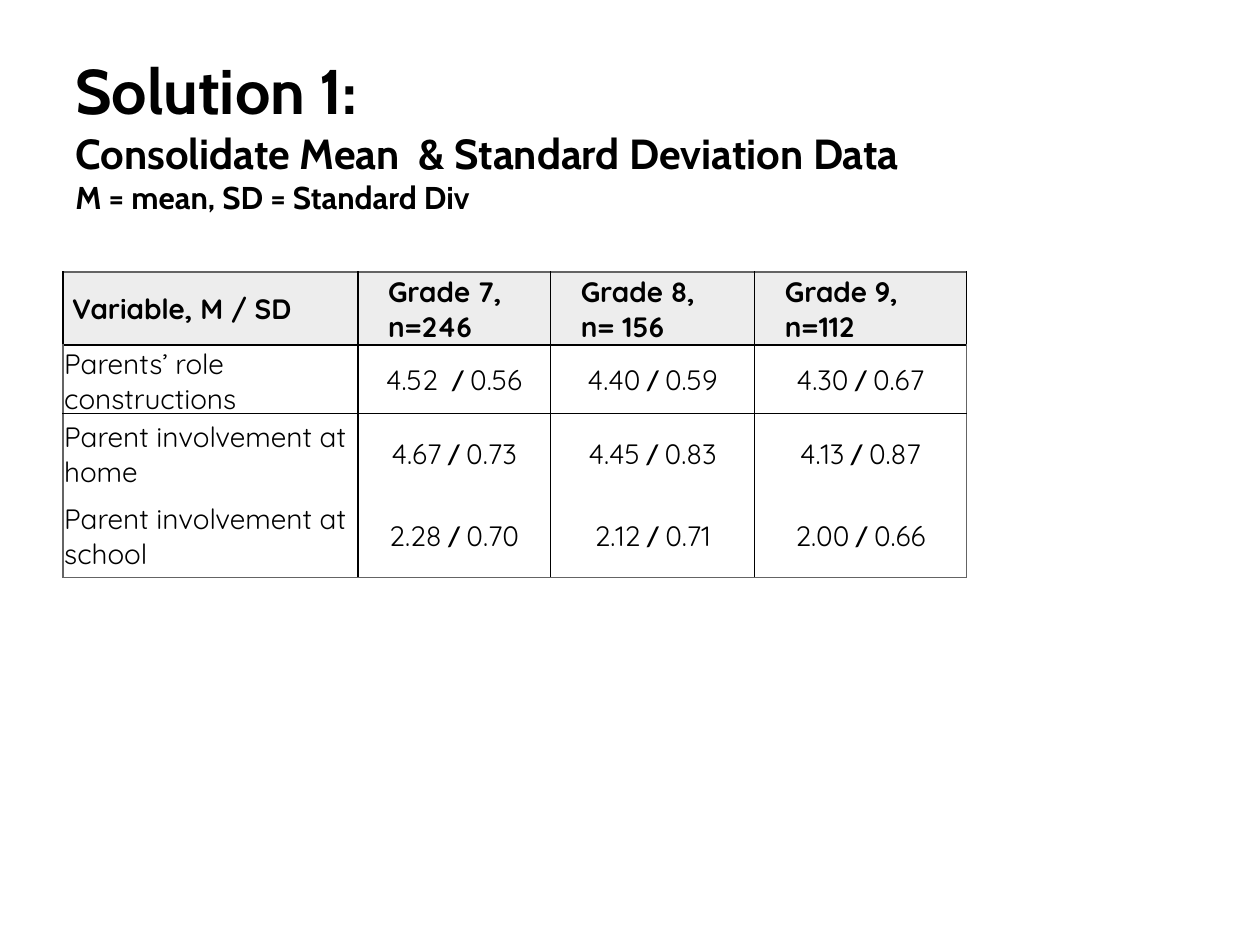
from dataclasses import dataclass
from typing import Optional

from lxml.etree import SubElement
from pptx import Presentation
from pptx.dml.color import RGBColor
from pptx.enum.text import MSO_ANCHOR as Anchor, PP_ALIGN as Align
from pptx.oxml.ns import qn
from pptx.util import Inches, Pt


@dataclass(frozen=True)
class Theme:
    ink: str = "000000"
    edge: str = "646464"
    header_fill: str = "EDEDED"
    title_font: str = "Cabin"
    table_font: str = "Quicksand"
    slash_font: str = "Calibri"
    title_size: int = 36
    subtitle_size: int = 24
    note_size: int = 18
    table_size: int = 16
    border_width: int = 1


@dataclass(frozen=True)
class Span:
    text: str
    font: str
    size: int
    bold: bool = False


@dataclass(frozen=True)
class Score:
    mean: str
    deviation: str


@dataclass(frozen=True)
class Variable:
    name: str
    scores: tuple[Score, ...]


@dataclass(frozen=True)
class Borders:
    left: Optional[str]
    right: Optional[str]
    top: Optional[str]
    bottom: Optional[str]


THEME = Theme()
TITLE = (
    Span("Solution 1:", THEME.title_font, THEME.title_size, True),
    Span("Consolidate Mean  & Standard Deviation Data", THEME.title_font, THEME.subtitle_size, True),
    Span("M = mean, SD = Standard Div", THEME.title_font, THEME.note_size, True),
)
HEADERS = (
    (" Variable, M / SD",),
    ("Grade 7, n=246",),
    ("Grade 8, ", "n= 156"),
    ("Grade 9, ", "n=112"),
)
VARIABLES = (
    Variable("Parents’ role constructions", (Score("4.52 ", "0.56"), Score("4.40", "0.59"), Score("4.30", "0.67"))),
    Variable("Parent involvement at home", (Score("4.67", "0.73"), Score("4.45", "0.83"), Score("4.13", "0.87"))),
    Variable("Parent involvement at school", (Score("2.28", "0.70"), Score("2.12", "0.71"), Score("2.00", "0.66"))),
)
COLUMN_WIDTHS = (2.34, 1.53, 1.62, 1.68)
ROW_HEIGHTS = (0.58, 0.43, 0.64, 0.66)


def set_values(target, values: dict) -> None:
    for name, value in values.items():
        setattr(target, name, value)


def write_span(para, span: Span) -> None:
    run = para.add_run()
    run.text = span.text
    set_values(run.font, {"name": span.font, "size": Pt(span.size), "bold": span.bold})
    run.font.color.rgb = RGBColor.from_string(THEME.ink)


def write_lines(para, spans: tuple[Span, ...]) -> None:
    for index, span in enumerate(spans):
        if index:
            para.add_line_break()
        write_span(para, span)


def table_span(text: str, bold: bool = False) -> Span:
    return Span(text, THEME.table_font, THEME.table_size, bold)


def draw_title(page) -> None:
    box = page.shapes.add_textbox(Inches(0.5), Inches(0.41), Inches(7.89), Inches(1.35))
    set_values(box.text_frame, {"word_wrap": True, "vertical_anchor": Anchor.BOTTOM})
    write_lines(box.text_frame.paragraphs[0], TITLE)


def draw_borders(cell, borders: Borders) -> None:
    properties = cell._tc.get_or_add_tcPr()
    sides = {"a:lnL": borders.left, "a:lnR": borders.right, "a:lnT": borders.top, "a:lnB": borders.bottom}
    for tag, color in sides.items():
        line = SubElement(properties, qn(tag), w=str(Pt(THEME.border_width)))
        if color is None:
            SubElement(line, qn("a:noFill"))
        else:
            fill = SubElement(line, qn("a:solidFill"))
            SubElement(fill, qn("a:srgbClr"), val=color)


def cell_borders(row: int, column: int) -> Borders:
    header = row == 0
    last_row, last_column = len(VARIABLES), len(HEADERS) - 1
    return Borders(
        left=THEME.edge if column == 0 and not header else THEME.ink,
        right=THEME.edge if column == last_column and not header else THEME.ink,
        top=THEME.edge if header else THEME.ink if row <= 2 else None,
        bottom=THEME.edge if row == last_row else THEME.ink if row < 2 else None,
    )


def format_cell(cell, row: int, column: int) -> None:
    indented = row == 0 and column > 0
    set_values(cell, {
        "vertical_anchor": Anchor.MIDDLE,
        "margin_left": Inches(0.24 if indented else 0.01),
        "margin_top": Inches(0.01),
        "margin_right": Inches(0.01),
        "margin_bottom": Inches(0),
    })
    draw_borders(cell, cell_borders(row, column))
    if row == 0:
        cell.fill.solid()
        cell.fill.fore_color.rgb = RGBColor.from_string(THEME.header_fill)
    else:
        cell.fill.background()


def write_score(para, score: Score) -> None:
    para.alignment = Align.CENTER
    write_span(para, table_span(score.mean))
    write_span(para, Span(" / ", THEME.slash_font, THEME.table_size, True))
    write_span(para, table_span(score.deviation))


def draw_table(page) -> None:
    frame = page.shapes.add_table(
        len(ROW_HEIGHTS), len(COLUMN_WIDTHS), Inches(0.5), Inches(2.16),
        Inches(sum(COLUMN_WIDTHS)), Inches(sum(ROW_HEIGHTS)),
    )
    table = frame.table
    set_values(table, {"first_row": False, "horz_banding": False})
    for column, width in zip(table.columns, COLUMN_WIDTHS):
        column.width = Inches(width)
    for row, height in zip(table.rows, ROW_HEIGHTS):
        row.height = Inches(height)
    for row in range(len(ROW_HEIGHTS)):
        for column in range(len(COLUMN_WIDTHS)):
            format_cell(table.cell(row, column), row, column)
    for column, lines in enumerate(HEADERS):
        para = table.cell(0, column).text_frame.paragraphs[0]
        write_lines(para, tuple(table_span(line, True) for line in lines))
    for row, variable in enumerate(VARIABLES, start=1):
        write_span(table.cell(row, 0).text_frame.paragraphs[0], table_span(variable.name))
        for column, score in enumerate(variable.scores, start=1):
            write_score(table.cell(row, column).text_frame.paragraphs[0], score)


def main() -> None:
    deck = Presentation()
    set_values(deck, {"slide_width": Inches(10), "slide_height": Inches(7.5)})
    page = deck.slides.add_slide(deck.slide_layouts[6])
    draw_title(page)
    draw_table(page)
    deck.save("out.pptx")


if __name__ == "__main__":
    main()
